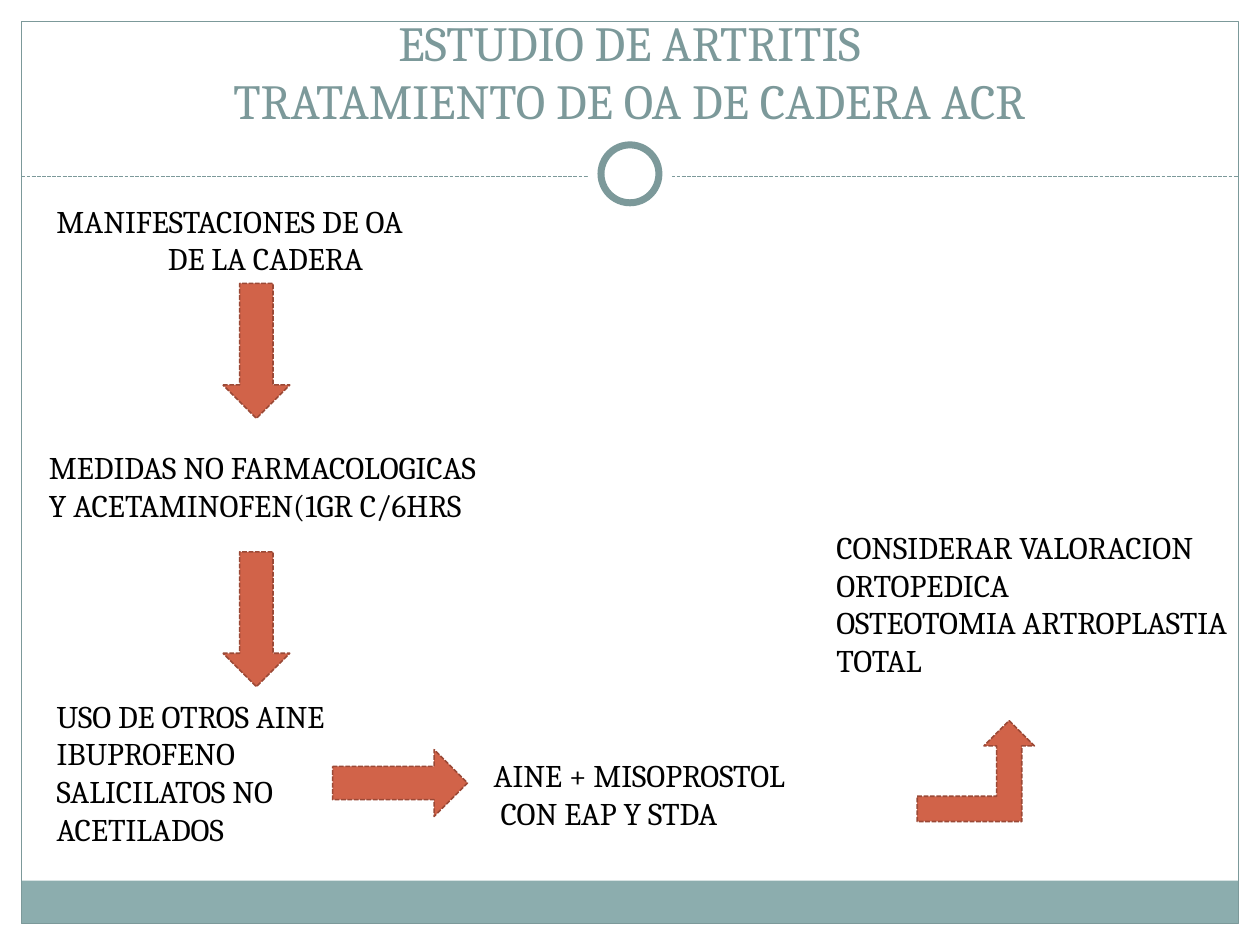
from pptx import Presentation
from pptx.dml.color import RGBColor
from pptx.enum.dml import MSO_LINE
from pptx.enum.shapes import MSO_CONNECTOR, MSO_SHAPE
from pptx.enum.text import MSO_ANCHOR, MSO_AUTO_SIZE, PP_ALIGN
from pptx.oxml.ns import qn
from pptx.util import Inches, Pt
from lxml.etree import SubElement

TITLE = ["ESTUDIO DE ARTRITIS", "TRATAMIENTO DE OA DE CADERA ACR"]
LEFT, CENTER = PP_ALIGN.LEFT, PP_ALIGN.CENTER
STEPS = [
    ((0.35, 1.55, 3.46, 0.71),
     [("MANIFESTACIONES DE OA", LEFT), (" DE LA CADERA", CENTER)]),
    ((0.29, 3.51, 9.71, 0.71),
     [("MEDIDAS NO FARMACOLOGICAS", LEFT), ("Y ACETAMINOFEN(1GR C/6HRS", LEFT)]),
    ((0.35, 5.48, 3.01, 1.31),
     [("USO DE OTROS AINE IBUPROFENO", LEFT), ("SALICILATOS NO ACETILADOS", LEFT)]),
    ((3.82, 5.95, 4.43, 0.71),
     [("AINE + MISOPROSTOL", LEFT), (" CON EAP Y STDA", LEFT)]),
    ((6.54, 4.14, 3.46, 1.62),
     [("CONSIDERAR VALORACION ORTOPEDICA", LEFT),
      ("OSTEOTOMIA ARTROPLASTIA TOTAL", LEFT)]),
]
ARROWS = [
    (MSO_SHAPE.DOWN_ARROW, (1.77, 2.25, 0.53, 1.07)),
    (MSO_SHAPE.DOWN_ARROW, (1.77, 4.38, 0.53, 1.07)),
    (MSO_SHAPE.RIGHT_ARROW, (2.64, 5.95, 1.07, 0.53)),
    (MSO_SHAPE.BENT_UP_ARROW, (7.28, 5.72, 0.93, 0.8)),
]
THEME = {
    "font": "Cambria", "title_size": 28, "body_size": 18,
    "accent": "7C999A", "band": "8CADAE", "paper": "FFFFFF", "text": "000000",
    "arrow": "D16349", "arrow_line": "9B4936",
}
WIDTH, HEIGHT, MARGIN = 10, 7.5, 0.17
RULE_Y, RING_Y, BAND_H = 1.4, 1.38, 0.34


def color(name):
    return RGBColor.from_string(THEME[name])


def set_line(line, name, width, dashed=False):
    line.color.rgb = color(name)
    line.width = Pt(width)
    if dashed:
        line.dash_style = MSO_LINE.SQUARE_DOT


def add_shape(s, kind, box, fill=None, line=None, width=0.75, dashed=False):
    sp = s.shapes.add_shape(kind, *map(Inches, box))
    sp.shadow.inherit = False
    if fill:
        sp.fill.solid()
        sp.fill.fore_color.rgb = color(fill)
    else:
        sp.fill.background()
    if line:
        set_line(sp.line, line, width, dashed)
    else:
        sp.line.fill.background()


def add_run(p, text, size, name):
    r = p.add_run()
    r.text = text
    r.font.name = THEME["font"]
    r.font.size = Pt(THEME[size])
    r.font.color.rgb = color(name)


def add_frame(s):
    inner = WIDTH - 2 * MARGIN
    bottom = HEIGHT - MARGIN
    add_shape(s, MSO_SHAPE.RECTANGLE, (MARGIN, bottom - BAND_H, inner, BAND_H), "band")
    add_shape(s, MSO_SHAPE.RECTANGLE, (MARGIN, MARGIN, inner, bottom - MARGIN),
              line="accent")
    rule = s.shapes.add_connector(
        MSO_CONNECTOR.STRAIGHT, Inches(MARGIN), Inches(RULE_Y),
        Inches(WIDTH - MARGIN), Inches(RULE_Y))
    set_line(rule.line, "accent", 0.75, True)
    SubElement(rule._element.spPr, qn("a:effectLst"))
    for size, line in [(0.67, None), (0.46, "accent")]:
        box = ((WIDTH - size) / 2, RING_Y - size / 2, size, size)
        add_shape(s, MSO_SHAPE.OVAL, box, "paper", line, 4)


def add_title(s):
    sp = s.shapes.title
    sp.left, sp.top, sp.width, sp.height = map(Inches, (0.33, 0.25, 9.33, 0.83))
    tf = sp.text_frame
    tf.auto_size = MSO_AUTO_SIZE.NONE
    tf.vertical_anchor = MSO_ANCHOR.BOTTOM
    p = tf.paragraphs[0]
    p.alignment = CENTER
    for i, text in enumerate(TITLE):
        if i:
            p.add_line_break()
        add_run(p, text, "title_size", "accent")


def add_step(s, box, lines):
    tf = s.shapes.add_textbox(*map(Inches, box)).text_frame
    tf.word_wrap = True
    for i, (text, align) in enumerate(lines):
        p = tf.add_paragraph() if i else tf.paragraphs[0]
        p.alignment = align
        add_run(p, text, "body_size", "text")


prs = Presentation()
prs.slide_width, prs.slide_height = Inches(WIDTH), Inches(HEIGHT)
s = prs.slides.add_slide(prs.slide_layouts[5])
add_frame(s)
add_title(s)
for box, lines in STEPS:
    add_step(s, box, lines)
for kind, box in ARROWS:
    add_shape(s, kind, box, "arrow", "arrow_line", 0.9, True)
prs.save("out.pptx")
